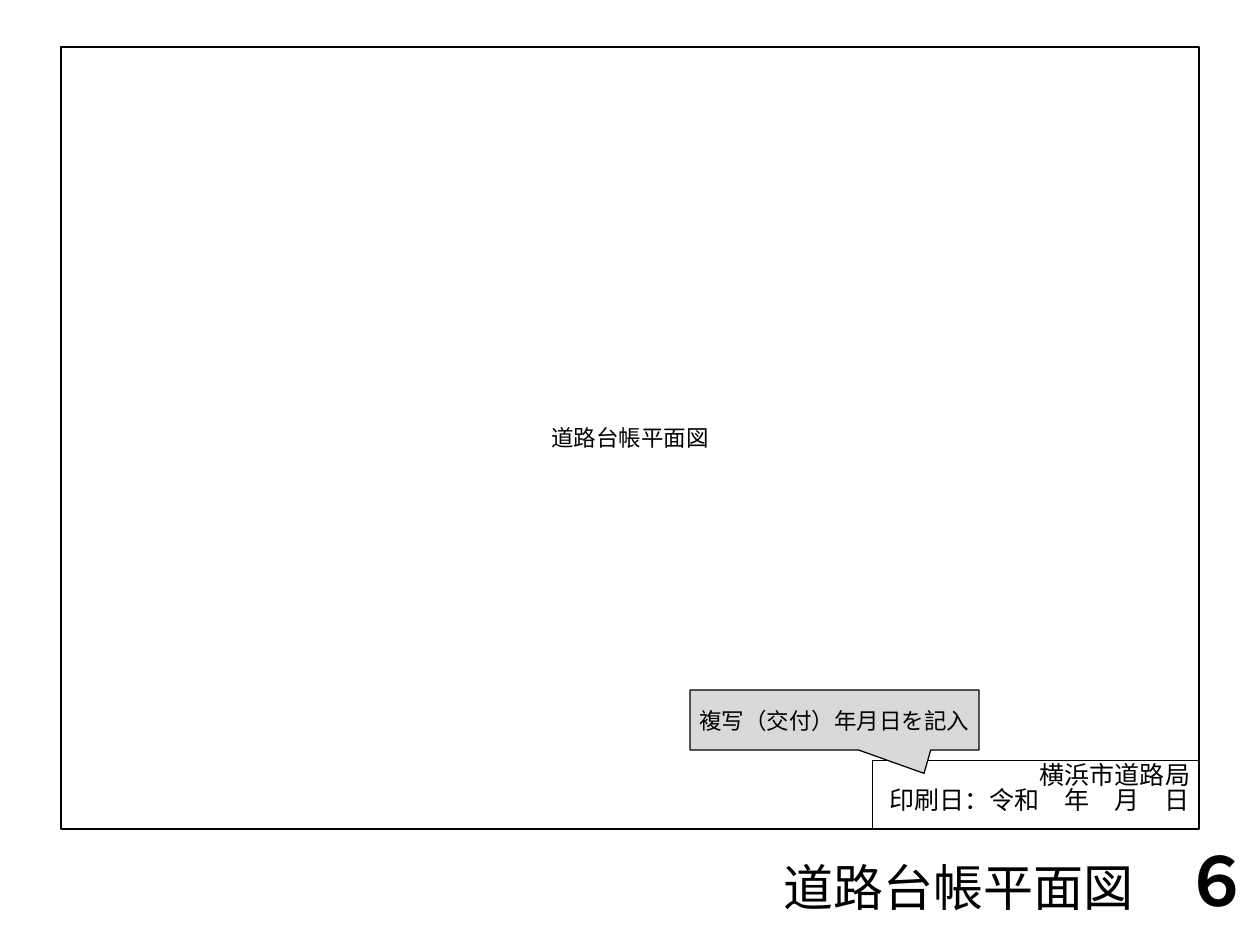
import pptx
import pptx.dml.color
import pptx.enum.shapes
import pptx.enum.text
import pptx.oxml
import pptx.oxml.ns
import pptx.util
from dataclasses import dataclass

PX = 914400 // 90
SHAPE = pptx.enum.shapes.MSO_SHAPE
ALIGN = pptx.enum.text.PP_ALIGN
ANCHOR = pptx.enum.text.MSO_ANCHOR


@dataclass(frozen=True)
class Theme:
    font: str = "Noto Sans CJK JP"
    ink: str = "000000"
    note_fill: str = "D9D9D9"
    body: int = 18
    stamp: int = 20
    title: int = 40
    number: int = 54
    tight: float = 0.83


THEME = Theme()


def rgb(value):
    return pptx.dml.color.RGBColor.from_string(value)


def place(shape, left, top, width, height):
    shape.left, shape.top = left * PX, top * PX
    shape.width, shape.height = width * PX, height * PX


def add_run(paragraph, text, size=THEME.body, bold=False):
    run = paragraph.add_run()
    run.text = text
    font = run.font
    font.name, font.size, font.bold = THEME.font, pptx.util.Pt(size), bold
    font.color.rgb = rgb(THEME.ink)
    east_asian = pptx.oxml.parse_xml(
        f'<a:ea {pptx.oxml.ns.nsdecls("a")} typeface="{THEME.font}"/>')
    font._element.find(pptx.oxml.ns.qn("a:latin")).addnext(east_asian)


def write(shape, paragraphs, align=ALIGN.CENTER, anchor=ANCHOR.MIDDLE, spacing=1.0):
    """Fill a shape with paragraphs, each a list of (text, run format)."""
    frame = shape.text_frame
    frame.word_wrap = True
    frame.auto_size = pptx.enum.text.MSO_AUTO_SIZE.NONE
    frame.vertical_anchor = anchor
    for index, runs in enumerate(paragraphs):
        paragraph = frame.add_paragraph() if index else frame.paragraphs[0]
        paragraph.alignment = align
        paragraph.line_spacing = spacing
        for text, run_format in runs:
            add_run(paragraph, text, **run_format)


def add_box(slide, box, kind=SHAPE.RECTANGLE, fill=None, line_width=1):
    shape = slide.shapes.add_shape(kind, 0, 0, 0, 0)
    place(shape, *box)
    shape.shadow.inherit = False
    if fill:
        shape.fill.solid()
        shape.fill.fore_color.rgb = rgb(fill)
    else:
        shape.fill.background()
    shape.line.color.rgb = rgb(THEME.ink)
    shape.line.width = pptx.util.Pt(line_width)
    return shape


def add_title(slide, text, number):
    title = slide.shapes.title
    place(title, 734, 848, 526, 91)
    write(title, [[(text, dict(size=THEME.title)),
                   (number, dict(size=THEME.number, bold=True))]],
          align=ALIGN.RIGHT, anchor=ANCHOR.TOP, spacing=THEME.tight)


def add_stamp(slide, lines):
    stamp = add_box(slide, (872, 760, 327, 69), line_width=0.75)
    write(stamp, [[(line, dict(size=THEME.stamp))] for line in lines],
          align=ALIGN.RIGHT, anchor=ANCHOR.TOP, spacing=THEME.tight)


def add_plan(slide, text):
    write(add_box(slide, (61, 47, 1138, 782)), [[(text, {})]])


def add_callout(slide, text):
    callout = add_box(slide, (690, 690, 289, 60),
                      SHAPE.RECTANGULAR_CALLOUT, THEME.note_fill)
    callout.adjustments[0] = 0.31
    callout.adjustments[1] = 0.89
    write(callout, [[(text, {})]])


def main():
    deck = pptx.Presentation()
    deck.slide_width, deck.slide_height = 1260 * PX, 945 * PX
    slide = deck.slides.add_slide(deck.slide_layouts.get_by_name("Title Only"))
    add_title(slide, "道路台帳平面図　", "６")
    add_stamp(slide, ["横浜市道路局", "印刷日：令和　年　月　日"])
    add_plan(slide, "道路台帳平面図")
    add_callout(slide, "複写（交付）年月日を記入")
    deck.save("out.pptx")


if __name__ == "__main__":
    main()
